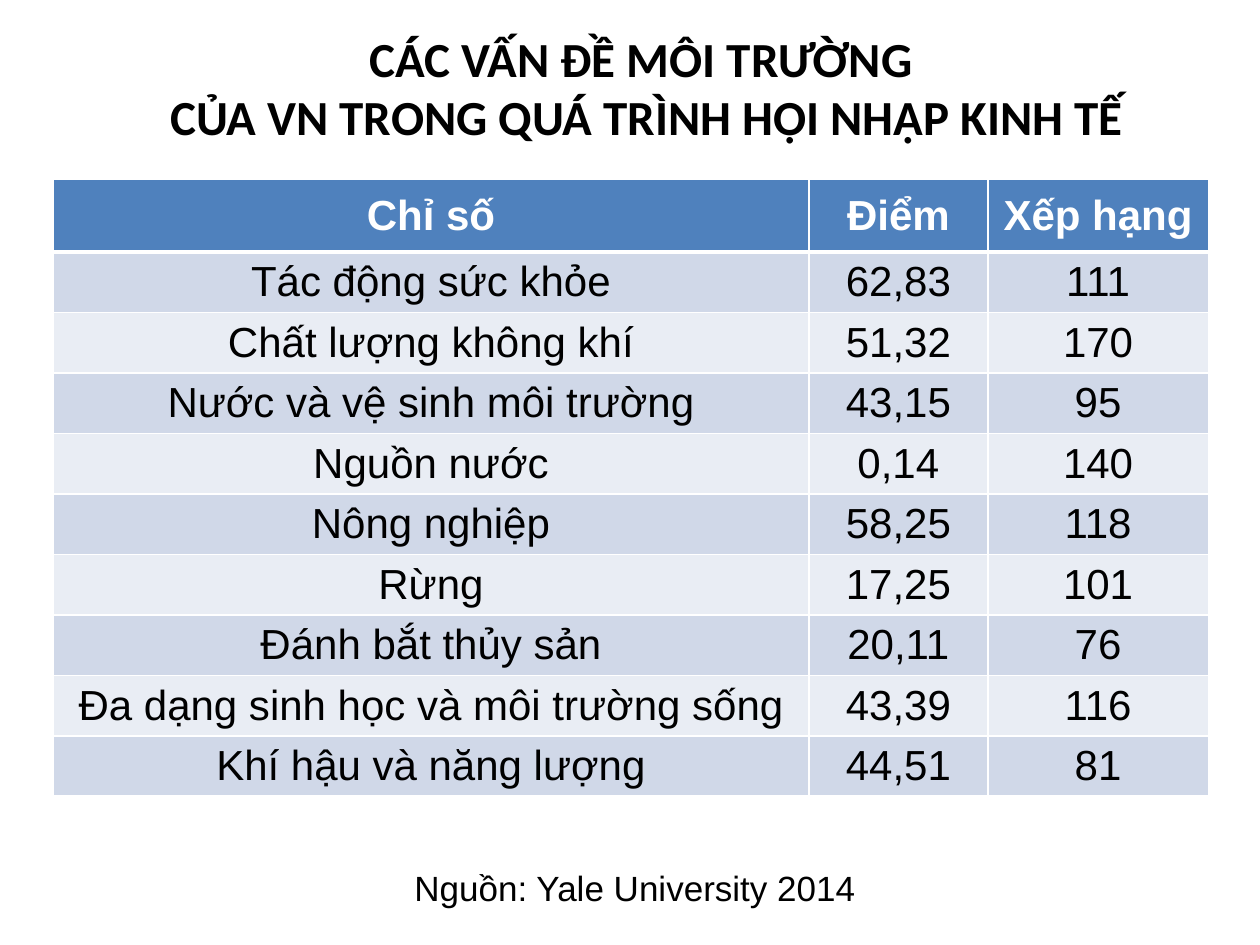
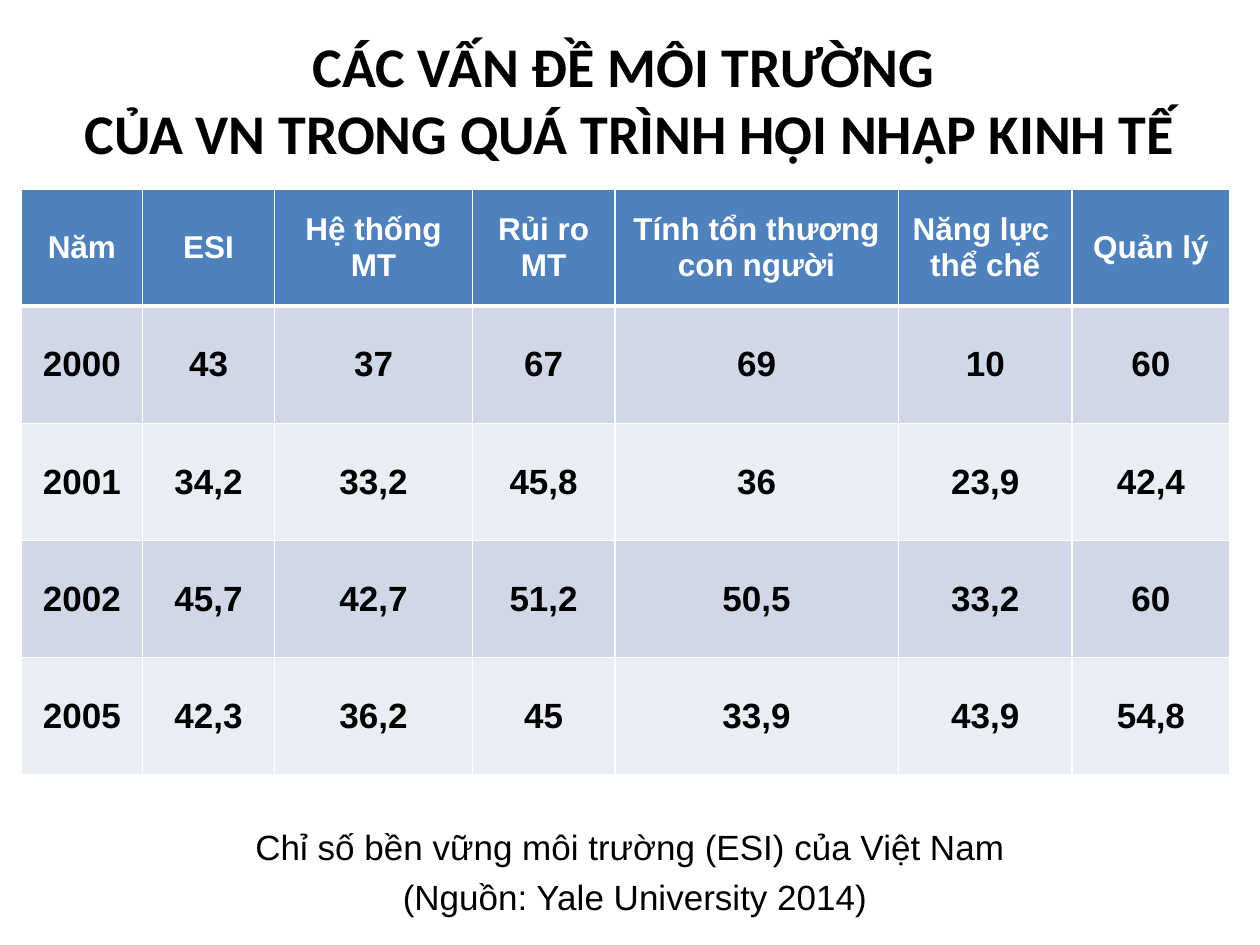
from dataclasses import dataclass

from lxml import etree
from pptx import Presentation
from pptx.dml.color import RGBColor
from pptx.enum.text import MSO_ANCHOR, PP_ALIGN
from pptx.oxml.ns import qn
from pptx.util import Inches, Pt

CENTER = PP_ALIGN.CENTER
TOP, MIDDLE = MSO_ANCHOR.TOP, MSO_ANCHOR.MIDDLE

BLACK = RGBColor(0x00, 0x00, 0x00)
WHITE = RGBColor(0xFF, 0xFF, 0xFF)
HEADER_BLUE = RGBColor(0x4F, 0x81, 0xBD)
BANDS = (RGBColor(0xD0, 0xD8, 0xE8), RGBColor(0xE9, 0xED, 0xF4))

TITLE_FONT, BODY_FONT = "Calibri", "Arial"
TITLE = "CÁC VẤN ĐỀ MÔI TRƯỜNG \vCỦA VN TRONG QUÁ TRÌNH HỘI NHẬP KINH TẾ"
CAPTION_SIZE = 20
THIN, THICK = 1, 3


@dataclass(frozen=True)
class Box:
    left: float
    top: float
    width: float
    height: float

    def lengths(self) -> list:
        return [Inches(v) for v in (self.left, self.top, self.width, self.height)]


@dataclass(frozen=True)
class TextStyle:
    size: float
    color: RGBColor = BLACK
    bold: bool = False
    font: str = BODY_FONT
    space_before: float = 0


@dataclass(frozen=True)
class IndexTable:
    left: float
    top: float
    column_widths: tuple
    header_height: float
    row_height: float
    header: TextStyle
    body: TextStyle
    rows: tuple


@dataclass(frozen=True)
class IndexSlide:
    title_box: Box
    title_size: float
    table: IndexTable
    caption_box: Box
    caption: str


HEALTH_INDEX = IndexSlide(
    Box(0.92, 0.38, 8.42, 0.62), 28,
    IndexTable(
        0.42, 1.42, (6, 1.42, 1.75), 0.58, 0.47,
        TextStyle(24, WHITE, True), TextStyle(24),
        (
            ("Chỉ số", "Điểm", "Xếp hạng"),
            ("Tác động sức khỏe", "62,83", "111"),
            ("Chất lượng không khí", "51,32", "170"),
            ("Nước và vệ sinh môi trường", "43,15", "95"),
            ("Nguồn nước", "0,14", "140"),
            ("Nông nghiệp", "58,25", "118"),
            ("Rừng", "17,25", "101"),
            ("Đánh bắt thủy sản", "20,11", "76"),
            ("Đa dạng sinh học và môi trường sống", "43,39", "116"),
            ("Khí hậu và năng lượng", "44,51", "81"),
        ),
    ),
    Box(1.25, 6.83, 7.58, 0.42), "Nguồn: Yale University 2014",
)

SUSTAINABILITY_INDEX = IndexSlide(
    Box(0.5, 0.16, 9, 1.25), 32,
    IndexTable(
        0.17, 1.5, (0.96, 1.05, 1.57, 1.13, 2.25, 1.38, 1.25), 0.93, 0.93,
        TextStyle(18, WHITE, True), TextStyle(20, bold=True),
        (
            ("Năm", "ESI", "Hệ thống MT", "Rủi ro MT",
             "Tính tổn thương con người", "Năng lực \nthể chế", "Quản lý"),
            ("2000", "43", "37", "67", "69", "10", "60"),
            ("2001", "34,2", "33,2", "45,8", "36", "23,9", "42,4"),
            ("2002", "45,7", "42,7", "51,2", "50,5", "33,2", "60"),
            ("2005", "42,3", "36,2", "45", "33,9", "43,9", "54,8"),
        ),
    ),
    Box(1.25, 6.5, 7.58, 0.42),
    "Chỉ số bền vững môi trường (ESI) của Việt Nam \n(Nguồn: Yale University 2014)",
)


def write_text(frame, text: str, style: TextStyle) -> None:
    """Fill a text frame with centred paragraphs in one style."""
    frame.text = text
    font_format = {"name": style.font, "size": Pt(style.size), "bold": style.bold}
    for paragraph in frame.paragraphs:
        paragraph.alignment = CENTER
        paragraph.space_before = Pt(style.space_before)
        for run in paragraph.runs:
            for key, value in font_format.items():
                setattr(run.font, key, value)
            run.font.color.rgb = style.color


def add_text(slide, box: Box, text: str, style: TextStyle, anchor) -> None:
    frame = slide.shapes.add_textbox(*box.lengths()).text_frame
    frame.word_wrap = True
    frame.vertical_anchor = anchor
    write_text(frame, text, style)


def add_borders(cell, top: float, bottom: float) -> None:
    """White cell rules; they must precede the fill in the cell properties."""
    properties = cell._tc.get_or_add_tcPr()
    for side, width in {"L": THIN, "R": THIN, "T": top, "B": bottom}.items():
        line = etree.SubElement(properties, qn(f"a:ln{side}"), w=str(Pt(width)))
        fill = etree.SubElement(line, qn("a:solidFill"))
        etree.SubElement(fill, qn("a:srgbClr"), val=str(WHITE))


def add_index_table(slide, spec_table: IndexTable) -> None:
    rows, widths = spec_table.rows, spec_table.column_widths
    heights = [spec_table.header_height] + [spec_table.row_height] * (len(rows) - 1)
    box = Box(spec_table.left, spec_table.top, sum(widths), sum(heights))
    table = slide.shapes.add_table(len(rows), len(widths), *box.lengths()).table
    table.horz_banding = False
    for column, width in zip(table.columns, widths):
        column.width = Inches(width)

    cell_format = {
        "vertical_anchor": MIDDLE,
        "margin_top": Inches(0.04),
        "margin_bottom": Inches(0.04),
    }
    for r, (values, height) in enumerate(zip(rows, heights)):
        table.rows[r].height = Inches(height)
        is_header = r == 0
        for c, value in enumerate(values):
            cell = table.cell(r, c)
            for key, setting in cell_format.items():
                setattr(cell, key, setting)
            add_borders(cell, THICK if r == 1 else THIN, THICK if is_header else THIN)
            cell.fill.solid()
            cell.fill.fore_color.rgb = HEADER_BLUE if is_header else BANDS[(r - 1) % 2]
            write_text(cell.text_frame, value,
                       spec_table.header if is_header else spec_table.body)


def add_index_slide(deck, content: IndexSlide) -> None:
    slide = deck.slides.add_slide(deck.slide_layouts[6])
    title_style = TextStyle(content.title_size, bold=True, font=TITLE_FONT)
    add_text(slide, content.title_box, TITLE, title_style, MIDDLE)
    add_index_table(slide, content.table)
    caption_style = TextStyle(CAPTION_SIZE, space_before=5)
    add_text(slide, content.caption_box, content.caption, caption_style, TOP)


def main() -> None:
    deck = Presentation()
    deck.slide_width, deck.slide_height = Inches(10), Inches(7.5)
    for content in (HEALTH_INDEX, SUSTAINABILITY_INDEX):
        add_index_slide(deck, content)
    deck.save("out.pptx")


if __name__ == "__main__":
    main()
